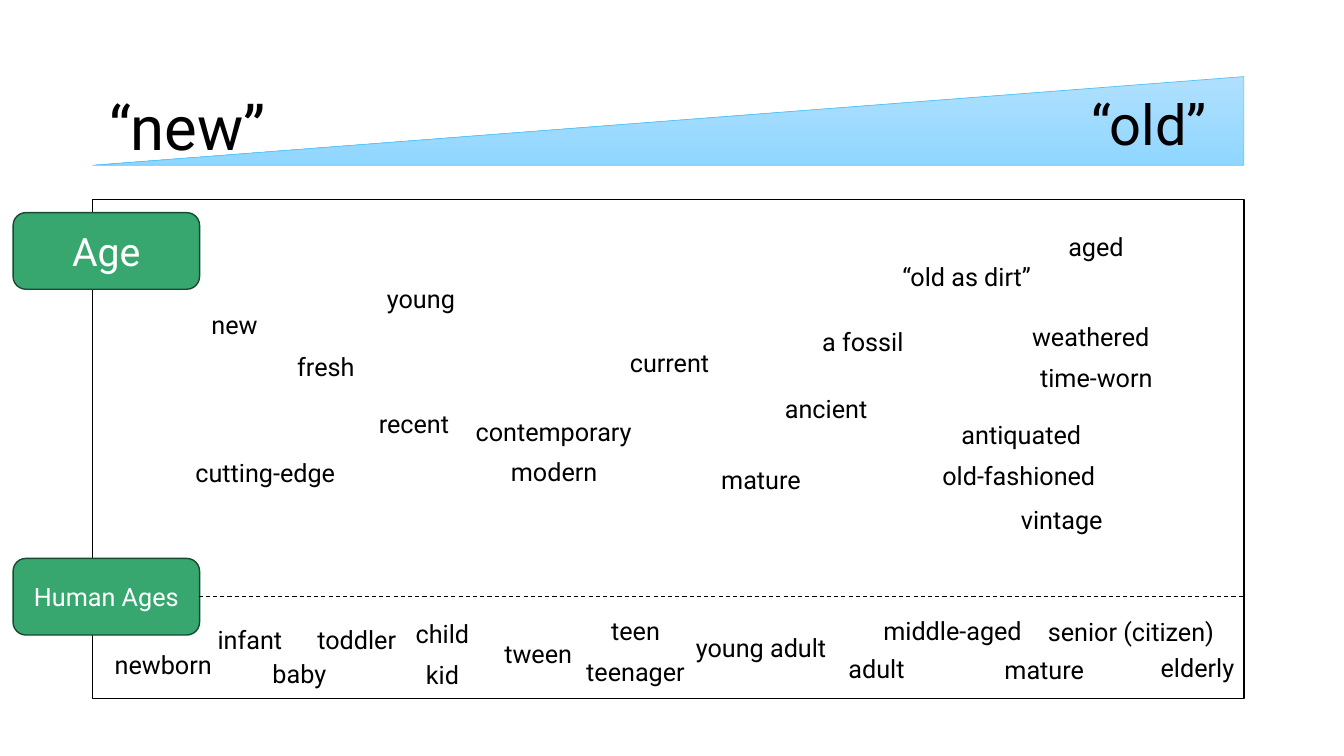
from dataclasses import dataclass
from typing import Any

from lxml import etree
from pptx import Presentation
from pptx.dml.color import RGBColor
from pptx.enum.dml import MSO_LINE
from pptx.enum.shapes import MSO_CONNECTOR, MSO_SHAPE
from pptx.enum.text import MSO_ANCHOR, PP_ALIGN
from pptx.oxml.ns import qn
from pptx.util import Inches, Pt

RECT = MSO_SHAPE.RECTANGLE
WEDGE = MSO_SHAPE.RIGHT_TRIANGLE
ROUND = MSO_SHAPE.ROUNDED_RECTANGLE
LINE = MSO_CONNECTOR.STRAIGHT
DASH = MSO_LINE.DASH
LEFT = PP_ALIGN.LEFT
MID = PP_ALIGN.CENTER
TOP = MSO_ANCHOR.TOP
CENTER = MSO_ANCHOR.MIDDLE

BLACK = RGBColor(0x00, 0x00, 0x00)
WHITE = RGBColor(0xFF, 0xFF, 0xFF)
GREEN = RGBColor(0x37, 0xA7, 0x6F)
PINE = RGBColor(0x18, 0x49, 0x31)
PALE = RGBColor(0xB0, 0xE0, 0xFE)
SKY = RGBColor(0x90, 0xD6, 0xFF)
BLUE = RGBColor(0x51, 0xC3, 0xF9)

CELL = Inches(0.1)
COLS, ROWS = 133.33, 75
EDGE, SPAN = 9.2, 114.2
SPLIT = 59.2

FONT = "Roboto"
PLAIN = {"alignment": LEFT}
TIGHT = {"alignment": MID, "line_spacing": 0.9, "space_before": Pt(10)}
BOLD = {"alignment": MID}


@dataclass(frozen=True)
class Word:
    text: str
    col: float
    row: float
    wide: float
    high: float = 4
    size: int = 18


@dataclass(frozen=True)
class Badge:
    text: str
    row: float
    size: int


ENDS = [
    Word("“new”", EDGE, 9.2, 18.8, 7.1, 44),
    Word("“old”", 104.6, 9.1, 18.8, 7.1, 40),
]
BADGES = [Badge("Age", 21.1, 28), Badge("Human Ages", 55.4, 18)]
LOOSE = [
    Word("new", 20, 30.2, 7.3),
    Word("fresh", 28.5, 34.4, 8.2),
    Word("recent", 36.6, 40, 9.6),
    Word("young", 37.4, 27.6, 9.3),
    Word("modern", 49.7, 44.8, 10.9),
    Word("contemporary", 46.2, 40.8, 17.8),
    Word("current", 61.5, 34, 10.9),
    Word("aged", 105, 22.5, 8.3),
    Word("vintage", 100.3, 49.5, 11),
    Word("old-fashioned", 92.5, 45.2, 17.8),
    Word("antiquated", 94.4, 41.1, 14),
    Word("time-worn", 102.2, 35.5, 14),
    Word("weathered", 101.4, 31.4, 15.5),
    Word("cutting-edge", 18.4, 44.9, 17.3),
]
CLOSE = [
    Word("“old as dirt”", 88.4, 25.8, 15),
    Word("a fossil", 79.9, 32.2, 11.4),
    Word("ancient", 75.9, 38.9, 12.1),
    Word("mature", 70, 45.9, 11),
    Word("infant", 19.5, 61.8, 10.6),
    Word("newborn", 10.3, 64.3, 11.8),
    Word("baby", 24.4, 65.2, 10.6),
    Word("toddler", 30.1, 61.8, 10.6),
    Word("child\nkid", 38.6, 61.2, 10.6, 8),
    Word("tween", 48.1, 63.2, 10.6),
    Word("teen\nteenager", 56.2, 60.9, 13.7, 8.2),
    Word("young adult", 67.6, 62.6, 15.8),
    Word("adult", 81.9, 64.7, 10.1),
    Word("middle-aged", 85.9, 60.9, 17.2),
    Word("mature", 98.1, 64.8, 11),
    Word("elderly", 113.3, 64.6, 11),
    Word("senior (citizen)", 102.3, 61, 19.8),
]


def grid(*spots: float) -> list[int]:
    return [round(spot * CELL) for spot in spots]


def apply(target: Any, form: dict[str, Any]) -> None:
    for name, value in form.items():
        setattr(target, name, value)


def write(shape: Any, text: str, size: int, ink: RGBColor,
          form: dict[str, Any], anchor: Any) -> None:
    frame = shape.text_frame
    frame.text = text
    apply(frame, {"word_wrap": True, "vertical_anchor": anchor})
    for para in frame.paragraphs:
        apply(para, form)
        for run in para.runs:
            apply(run.font, {"name": FONT, "size": Pt(size)})
            run.font.color.rgb = ink


def block(slide: Any, kind: Any, spots: list[int],
          edge: RGBColor, width: float) -> Any:
    shape = slide.shapes.add_shape(kind, *spots)
    shape.shadow.inherit = False
    shape.line.color.rgb = edge
    shape.line.width = Pt(width)
    return shape


def panel(slide: Any) -> None:
    shape = block(slide, RECT, grid(EDGE, 19.8, SPAN, 49.5), BLACK, 1)
    shape.fill.solid()
    shape.fill.fore_color.rgb = WHITE


def wedge(slide: Any) -> None:
    shape = block(slide, WEDGE, grid(EDGE, 7.6, SPAN, 8.8), BLUE, 0.5)
    shape._element.spPr.get_or_add_xfrm().set("flipH", "1")
    shape.fill.gradient()
    shape.fill.gradient_angle = 270
    for stop, tint in zip(shape.fill.gradient_stops, (PALE, SKY)):
        stop.color.rgb = tint


def badge(slide: Any, item: Badge) -> None:
    shape = block(slide, ROUND, grid(1.3, item.row, 18.5, 7.6), PINE, 1)
    shape.fill.solid()
    shape.fill.fore_color.rgb = GREEN
    write(shape, item.text, item.size, WHITE, BOLD, CENTER)


def split(slide: Any) -> None:
    line = slide.shapes.add_connector(
        LINE, *grid(19.7, SPLIT, EDGE + SPAN, SPLIT))
    apply(line.line, {"width": Pt(0.75), "dash_style": DASH})
    line.line.color.rgb = BLACK
    etree.SubElement(line._element.spPr, qn("a:effectLst"))


def label(slide: Any, word: Word, form: dict[str, Any]) -> None:
    box = slide.shapes.add_textbox(
        *grid(word.col, word.row, word.wide, word.high))
    write(box, word.text, word.size, BLACK, form, TOP)


def main() -> None:
    deck = Presentation()
    wide, high = grid(COLS, ROWS)
    apply(deck, {"slide_width": wide, "slide_height": high})
    slide = deck.slides.add_slide(deck.slide_layouts[6])
    panel(slide)
    wedge(slide)
    for item in BADGES:
        badge(slide, item)
    split(slide)
    for words, form in ((ENDS, TIGHT), (LOOSE, PLAIN), (CLOSE, TIGHT)):
        for word in words:
            label(slide, word, form)
    deck.save("out.pptx")


if __name__ == "__main__":
    main()
